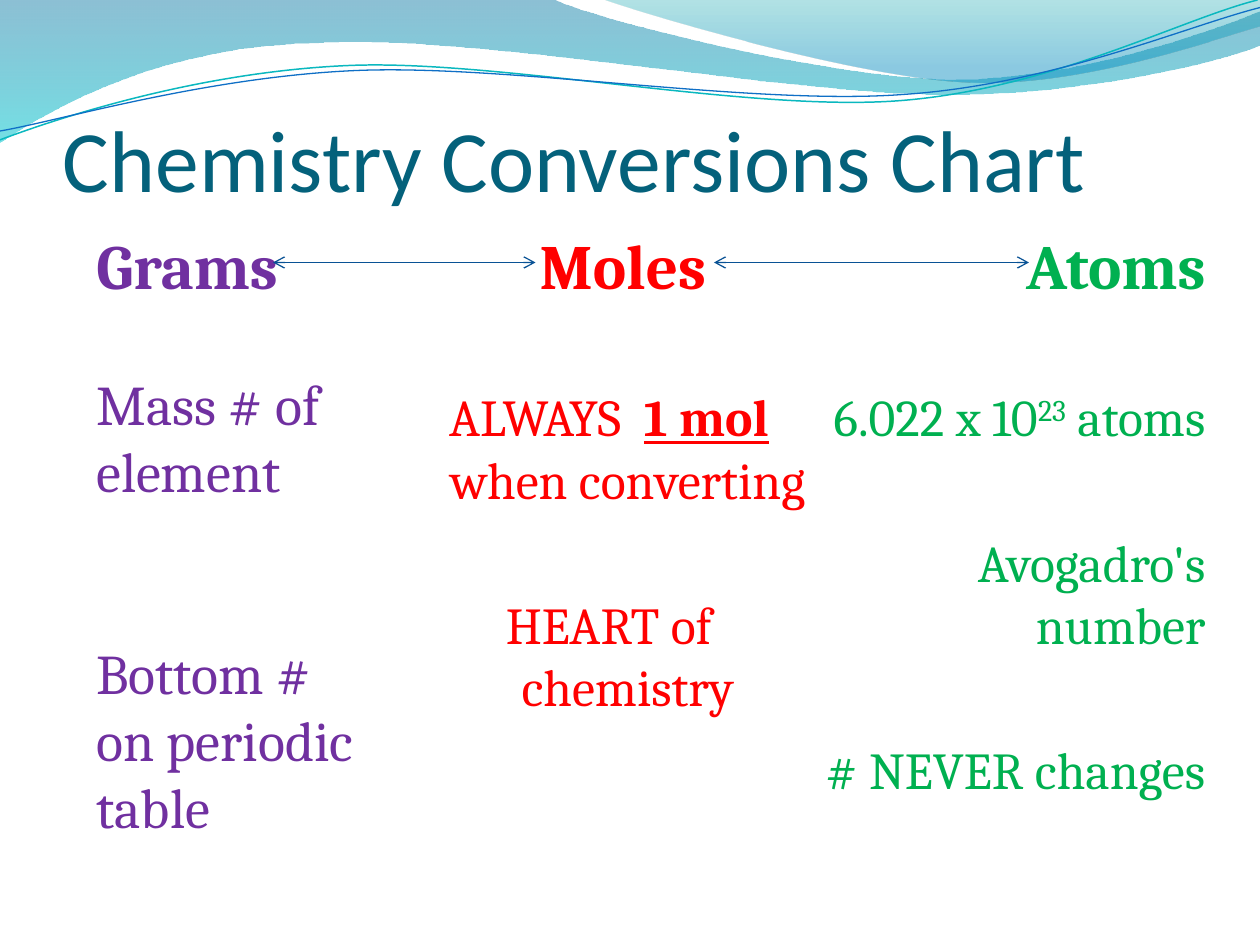
from dataclasses import dataclass

from lxml import etree
from pptx import Presentation
from pptx.dml.color import RGBColor
from pptx.enum.shapes import MSO_CONNECTOR
from pptx.enum.text import MSO_ANCHOR, PP_ALIGN
from pptx.oxml.ns import qn
from pptx.util import Inches, Pt

LEFT, CENTER, RIGHT = PP_ALIGN.LEFT, PP_ALIGN.CENTER, PP_ALIGN.RIGHT
TOP, BOTTOM = MSO_ANCHOR.TOP, MSO_ANCHOR.BOTTOM
STRAIGHT = MSO_CONNECTOR.STRAIGHT

WIDTH, HEIGHT = Inches(10), Inches(7.5)
COLUMNS = 12  # the slide is 12 x 9 square modules
LINE_PITCH = 1.2
BODY_TOP = 2.1
ARROW_ROW = 2.5


@dataclass(frozen=True)
class Theme:
    title_font: str = "Calibri"
    body_font: str = "Cambria"
    title_size: float = 50
    head_size: float = 36
    grams_size: float = 32
    body_size: float = 29.6
    title: str = "04617B"
    grams: str = "7030A0"
    moles: str = "FF0000"
    atoms: str = "00B050"
    arrow: str = "095295"
    teal_line: str = "0AB8BF"
    blue_line: str = "0F6FC6"
    # gradient stops: position, colour, opacity in percent
    wide_wave: tuple = ((0, "0074A1", 45), (1, "00C6CF", 55))
    right_wave: tuple = ((0, "00A1A9", 30), (0.8, "008BBF", 45))


THEME = Theme()

# Waves in tenths of the slide's width: a pair is a corner, six numbers a curve.
WIDE_WAVE = [(0, 0), (4.4, 0), (4.76, 0.17, 6.64, 0.63, 7.58, 0.63),
             (8.53, 0.63, 9.58, 0.26, 10, 0.09), (10, 0.36),
             (9.83, 0.44, 8.7, 0.76, 7.46, 0.75),
             (6.22, 0.75, 3.82, 0.28, 2.57, 0.34),
             (1.29, 0.36, 0.46, 0.83, 0, 1.13)]
RIGHT_WAVE = [(4.79, 0), (5.09, 0.11, 6.82, 0.62, 7.69, 0.65),
              (8.56, 0.69, 9.61, 0.32, 10, 0.21), (10, 0)]
TEAL_WAVE = [(0, 1.11), (0.48, 0.93, 1.58, 0.57, 2.77, 0.52),
             (3.95, 0.47, 5.93, 0.89, 7.13, 0.8),
             (8.33, 0.71, 9.38, 0.15, 9.98, 0)]
BLUE_WAVE = [(0, 1.04), (0.47, 0.96, 1.64, 0.61, 2.83, 0.56),
             (4.03, 0.51, 5.97, 0.84, 7.17, 0.75),
             (8.36, 0.67, 9.41, 0.21, 10, 0.06)]


def grid(n):
    return round(WIDTH / COLUMNS * n)


def rgb(color):
    return RGBColor.from_string(color)


def add_outline(s, outline, closed):
    """Build the outline from its end points, then bend the curved segments."""
    unit = WIDTH / 10
    ends = [(round(step[-2] * unit), round(step[-1] * unit)) for step in outline]
    builder = s.shapes.build_freeform(*ends[0], scale=1.0)
    builder.add_line_segments(ends[1:], close=closed)
    sp = builder.convert_to_shape()
    sp.shadow.inherit = False
    segments = list(sp._element.iter(qn("a:lnTo")))
    for segment, step in zip(segments, outline[1:]):
        if len(step) == 2:
            continue
        curve = etree.Element(qn("a:cubicBezTo"))
        for x, y in zip(step[::2], step[1::2]):
            etree.SubElement(curve, qn("a:pt"), x=str(round(x * unit) - sp.left),
                             y=str(round(y * unit) - sp.top))
        segment.getparent().replace(segment, curve)
    return sp


def add_wave_area(s, outline, stops):
    sp = add_outline(s, outline, closed=True)
    sp.line.fill.background()
    sp.fill.gradient()
    sp.fill.gradient_angle = 270
    for stop, (position, color, _) in zip(sp.fill.gradient_stops, stops):
        stop.position = position
        stop.color.rgb = rgb(color)
    colors = sp._element.spPr.iter(qn("a:srgbClr"))
    for node, (_, _, opacity) in zip(colors, stops):
        etree.SubElement(node, qn("a:alpha"), val=str(opacity * 1000))


def add_wave_line(s, outline, color, width):
    sp = add_outline(s, outline, closed=False)
    sp.fill.background()
    sp.line.color.rgb = rgb(color)
    sp.line.width = Pt(width)


def add_box(s, left, top, width, height, anchor=TOP):
    sp = s.shapes.add_textbox(*map(grid, (left, top, width, height)))
    tf = sp.text_frame
    tf.word_wrap = True
    tf.vertical_anchor = anchor
    return tf


def add_run(p, text, *, size, color, font=THEME.body_font, bold=False,
            underline=False, superscript=False):
    r = p.add_run()
    r.text = text
    r.font.name, r.font.size = font, Pt(size)
    r.font.bold, r.font.underline = bold, underline
    r.font.color.rgb = rgb(color)
    if superscript:
        r.font._element.set("baseline", "30000")


def add_column(s, left, width, height, paragraphs, *, color, size, align=LEFT,
               hang=0, head_indent=0, spacing=0):
    """Fill a column; each paragraph is (blank lines above, runs with formats)."""
    tf = add_box(s, left, BODY_TOP, width, height)
    for i, (gap, runs) in enumerate(paragraphs):
        p = tf.paragraphs[0] if i == 0 else tf.add_paragraph()
        p.alignment = align
        if gap:
            p.space_before = Pt(size * (gap * LINE_PITCH + (gap + 1) * spacing))
        if hang:
            pPr = p._p.get_or_add_pPr()
            pPr.set("marL", str(Inches(hang)))
            pPr.set("indent", str(Inches(-hang if i else head_indent - hang)))
        for text, style in runs:
            add_run(p, text, **{"size": size, "color": color, **style})


def add_double_arrow(s, start, end):
    line = s.shapes.add_connector(STRAIGHT, grid(start), grid(ARROW_ROW),
                                  grid(end), grid(ARROW_ROW))
    line.line.color.rgb = rgb(THEME.arrow)
    line.line.width = Pt(0.75)
    ln = line.line._get_or_add_ln()
    for tag in ("a:headEnd", "a:tailEnd"):
        etree.SubElement(ln, qn(tag), type="arrow")
    etree.SubElement(line._element.spPr, qn("a:effectLst"))


def add_title(s, text):
    tf = add_box(s, 0.6, 0.5, 10.8, 1.5, anchor=BOTTOM)
    tf.margin_left = tf.margin_right = tf.margin_bottom = 0
    add_run(tf.paragraphs[0], text, size=THEME.title_size, color=THEME.title,
            font=THEME.title_font)


def main():
    prs = Presentation()
    prs.slide_width, prs.slide_height = WIDTH, HEIGHT
    s = prs.slides.add_slide(prs.slide_layouts[6])

    add_wave_area(s, WIDE_WAVE, THEME.wide_wave)
    add_wave_area(s, RIGHT_WAVE, THEME.right_wave)
    add_wave_line(s, TEAL_WAVE, THEME.teal_line, 0.85)
    add_wave_line(s, BLUE_WAVE, THEME.blue_line, 0.75)
    add_title(s, "Chemistry Conversions Chart")

    head = {"size": THEME.head_size, "bold": True}
    add_column(s, 3.8, 4, 6.5, [
        (0, [("Moles", head)]),
        (1, [("ALWAYS  ", {}), ("1 mol ", {"bold": True, "underline": True}),
             ("when converting", {})]),
        (1, [("HEART of chemistry", {})]),
    ], color=THEME.moles, size=THEME.body_size, align=CENTER, hang=0.3,
        head_indent=0.22, spacing=0.2)
    add_column(s, 7.7, 3.9, 5.94, [
        (0, [("Atoms", head)]),
        (1, [("6.022 x 10", {}), ("23", {"superscript": True}), (" atoms", {})]),
        (1, [("Avogadro's number", {})]),
        (1, [("# NEVER changes", {})]),
    ], color=THEME.atoms, size=THEME.body_size, align=RIGHT, hang=0.3, spacing=0.2)
    add_column(s, 0.8, 2.7, 6.66, [
        (0, [("Grams", head)]),
        (1, [("Mass # of element", {})]),
        (2, [("Bottom # on periodic table", {})]),
    ], color=THEME.grams, size=THEME.grams_size)

    add_double_arrow(s, 2.6, 5.1)
    add_double_arrow(s, 6.8, 9.8)
    prs.save("out.pptx")


if __name__ == "__main__":
    main()
